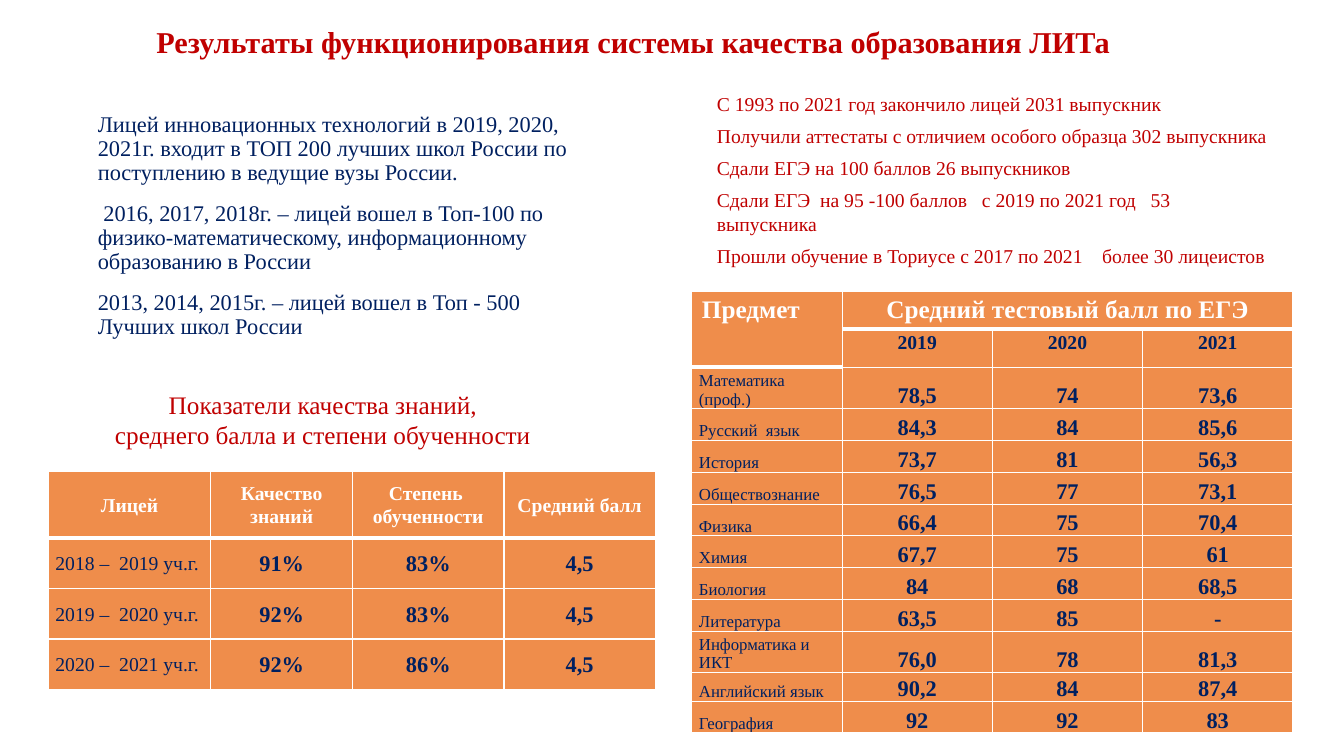
from dataclasses import dataclass
from typing import Optional

from lxml.etree import SubElement
from pptx import Presentation
from pptx.dml.color import RGBColor
from pptx.enum.text import MSO_ANCHOR, MSO_AUTO_SIZE, PP_ALIGN
from pptx.oxml.ns import qn
from pptx.util import Inches, Pt

FONT = "Times New Roman"
COLORS = {"red": "C00000", "navy": "002060", "white": "FFFFFF", "orange": "EF8D4B"}
SLIDE_WIDTH, SLIDE_HEIGHT = Inches(13.33), Inches(7.5)


def across(percent: float) -> int:
    return round(SLIDE_WIDTH * percent / 100)


def down(percent: float) -> int:
    return round(SLIDE_HEIGHT * percent / 100)


@dataclass(frozen=True)
class Area:
    left: float
    top: float
    width: float
    height: float

    def box(self) -> tuple[int, int, int, int]:
        return across(self.left), down(self.top), across(self.width), down(self.height)


@dataclass(frozen=True)
class Style:
    size: float
    color: str
    bold: bool = False
    align: PP_ALIGN = PP_ALIGN.LEFT
    line_spacing: float = 1.0
    space_before: float = 0
    space_after: float = 0


@dataclass(frozen=True)
class TextBlock:
    area: Area
    lines: list[str]
    style: Style
    anchor: MSO_ANCHOR
    placeholder: Optional[int] = None
    inset_top: float = 0.05


@dataclass(frozen=True)
class TableBlock:
    area: Area
    columns: list[float]
    rows: list[float]


TITLE = Style(21.6, "red", bold=True, line_spacing=0.9)
RANKING = Style(16, "navy", line_spacing=0.9, space_before=12)
GRADUATES = Style(14, "red", space_before=6)
CAPTION = Style(18, "red", align=PP_ALIGN.CENTER)

QUALITY_HEADER = Style(14, "white", True, PP_ALIGN.CENTER, 1.07)
QUALITY_YEAR = Style(14, "navy", line_spacing=1.07)
QUALITY_VALUE = Style(16, "navy", True, PP_ALIGN.CENTER, 1.07)

EXAM_CORNER = Style(18, "white", True)
EXAM_HEADER = Style(18, "white", True, PP_ALIGN.CENTER)
EXAM_YEAR = Style(14, "navy", True, PP_ALIGN.CENTER, 1.15, space_after=10)
EXAM_SUBJECT = Style(12, "navy", line_spacing=1.15, space_after=10)
EXAM_LONG_SUBJECT = Style(12, "navy")
EXAM_SCORE = Style(16, "navy", True, PP_ALIGN.CENTER, 1.15, space_after=10)

TEXT_BLOCKS = [
    TextBlock(Area(10.88, 3.6, 86.27, 8.27),
              ["Результаты функционирования системы качества образования ЛИТа"],
              TITLE, MSO_ANCHOR.TOP, placeholder=0, inset_top=0),
    TextBlock(Area(6.53, 12.27, 38.93, 33.33), [
        "Лицей инновационных технологий в 2019, 2020, 2021г. входит в ТОП 200 лучших школ "
        "России по поступлению в ведущие вузы России.",
        " 2016, 2017, 2018г. – лицей вошел в Топ-100 по физико-математическому, "
        "информационному  образованию в России",
        "2013, 2014, 2015г. – лицей вошел в Топ - 500 Лучших школ России",
    ], RANKING, MSO_ANCHOR.BOTTOM, placeholder=1),
    TextBlock(Area(52.59, 9.6, 42.54, 26.4), [
        "С 1993 по 2021 год закончило лицей 2031 выпускник",
        "Получили аттестаты с отличием особого образца 302 выпускника",
        "Сдали ЕГЭ на 100 баллов 26 выпускников",
        "Сдали ЕГЭ  на 95 -100 баллов   с 2019 по 2021 год   53 выпускника",
        "Прошли обучение в Ториусе с 2017 по 2021    более 30 лицеистов",
    ], GRADUATES, MSO_ANCHOR.BOTTOM, placeholder=2),
    TextBlock(Area(3.8, 50.8, 40.44, 13.47),
              ["Показатели качества знаний,", "среднего балла и степени обученности"],
              CAPTION, MSO_ANCHOR.TOP),
]

QUALITY_TABLE = TableBlock(Area(3.6, 62.4, 45.16, 28.8),
                           [12.08, 10.56, 11.26, 11.26], [8.8] + [6.67] * 3)
QUALITY_ROWS = [
    ["Лицей", "Качество знаний", "Степень  обученности", "Средний балл"],
    ["2018 –  2019 уч.г.", "91%", "83%", "4,5"],
    ["2019 –  2020 уч.г.", "92%", "83%", "4,5"],
    ["2020 –  2021 уч.г.", "92%", "86%", "4,5"],
]

EXAM_TABLE = TableBlock(Area(51.48, 38.53, 44.72, 58.13), [11.18] * 4,
                        [4.8, 4.13, 5.5] + [4.2] * 7 + [5.5, 3.7, 4.2])
EXAM_YEARS = ["2019", "2020", "2021"]
LONG_SUBJECTS = {"Математика (проф.)", "Информатика и ИКТ"}
EXAM_ROWS = [
    ["Математика (проф.)", "78,5", "74", "73,6"],
    ["Русский  язык", "84,3", "84", "85,6"],
    ["История", "73,7", "81", "56,3"],
    ["Обществознание", "76,5", "77", "73,1"],
    ["Физика", "66,4", "75", "70,4"],
    ["Химия", "67,7", "75", "61"],
    ["Биология", "84", "68", "68,5"],
    ["Литература", "63,5", "85", "-"],
    ["Информатика и ИКТ", "76,0", "78", "81,3"],
    ["Английский язык", "90,2", "84", "87,4"],
    ["География", "92", "92", "83"],
]


def write_lines(text_frame, lines: list[str], style: Style) -> None:
    for index, line in enumerate(lines):
        paragraph = text_frame.paragraphs[0] if index == 0 else text_frame.add_paragraph()
        paragraph.text = line
        paragraph.alignment = style.align
        paragraph.line_spacing = style.line_spacing
        paragraph.space_before = Pt(style.space_before)
        paragraph.space_after = Pt(style.space_after)
        font = paragraph.font
        font.name, font.size, font.bold = FONT, Pt(style.size), style.bold
        font.color.rgb = RGBColor.from_string(COLORS[style.color])


def remove_bullets(text_frame) -> None:
    for paragraph in text_frame.paragraphs:
        properties = paragraph._p.get_or_add_pPr()
        properties.set("marL", "0")
        properties.set("indent", "0")
        properties.insert_element_before(
            properties.makeelement(qn("a:buNone")), "a:tabLst", "a:defRPr", "a:extLst")


def add_text(slide, block: TextBlock) -> None:
    if block.placeholder is None:
        shape = slide.shapes.add_textbox(*block.area.box())
    else:
        shape = slide.placeholders[block.placeholder]
        shape.left, shape.top, shape.width, shape.height = block.area.box()
    text_frame = shape.text_frame
    text_frame.word_wrap = True
    text_frame.auto_size = MSO_AUTO_SIZE.NONE
    text_frame.vertical_anchor = block.anchor
    text_frame.margin_top = Inches(block.inset_top)
    write_lines(text_frame, block.lines, block.style)
    if block.placeholder:
        remove_bullets(text_frame)


def add_table(slide, block: TableBlock):
    table = slide.shapes.add_table(len(block.rows), len(block.columns), *block.area.box()).table
    for column, width in zip(table.columns, block.columns):
        column.width = across(width)
    for row, height in zip(table.rows, block.rows):
        row.height = down(height)
    return table


def draw_borders(cell, sides: dict[str, float]) -> None:
    properties = cell._tc.get_or_add_tcPr()
    for side, width in sides.items():
        line = SubElement(properties, qn(f"a:ln{side}"), w=str(Pt(width)))
        SubElement(SubElement(line, qn("a:solidFill")), qn("a:srgbClr"), val=COLORS["white"])


def fill_cell(cell, text: str, style: Style, anchor: MSO_ANCHOR,
              header: bool = False, tight: bool = True) -> None:
    draw_borders(cell, {"L": 1, "R": 1, "T": 1, "B": 3} if header else {"L": 1, "R": 1, "B": 1})
    cell.fill.solid()
    cell.fill.fore_color.rgb = RGBColor.from_string(COLORS["orange"])
    cell.vertical_anchor = anchor
    if tight:
        cell.margin_left = cell.margin_right = Inches(0.07)
        cell.margin_top = cell.margin_bottom = 0
    if text:
        write_lines(cell.text_frame, [text], style)


def add_quality_table(slide) -> None:
    table = add_table(slide, QUALITY_TABLE)
    for row, texts in enumerate(QUALITY_ROWS):
        for column, text in enumerate(texts):
            body_style = QUALITY_VALUE if column else QUALITY_YEAR
            fill_cell(table.cell(row, column), text, body_style if row else QUALITY_HEADER,
                      MSO_ANCHOR.MIDDLE, header=row == 0)


def add_exam_table(slide) -> None:
    table = add_table(slide, EXAM_TABLE)
    table.cell(0, 0).merge(table.cell(1, 0))
    table.cell(0, 1).merge(table.cell(0, 3))
    for column, text in enumerate(["Предмет", "Средний тестовый балл по ЕГЭ", "", ""]):
        fill_cell(table.cell(0, column), text, EXAM_HEADER if column else EXAM_CORNER,
                  MSO_ANCHOR.TOP, header=True, tight=False)
    for column, year in enumerate(["", *EXAM_YEARS]):
        fill_cell(table.cell(1, column), year, EXAM_YEAR, MSO_ANCHOR.TOP, header=column == 0)
    for row, texts in enumerate(EXAM_ROWS, start=2):
        subject_style = EXAM_LONG_SUBJECT if texts[0] in LONG_SUBJECTS else EXAM_SUBJECT
        for column, text in enumerate(texts):
            fill_cell(table.cell(row, column), text, EXAM_SCORE if column else subject_style,
                      MSO_ANCHOR.BOTTOM)


def main() -> None:
    presentation = Presentation()
    presentation.slide_width, presentation.slide_height = SLIDE_WIDTH, SLIDE_HEIGHT
    slide = presentation.slides.add_slide(presentation.slide_layouts[3])
    for block in TEXT_BLOCKS:
        add_text(slide, block)
    add_quality_table(slide)
    add_exam_table(slide)
    presentation.save("out.pptx")


if __name__ == "__main__":
    main()
